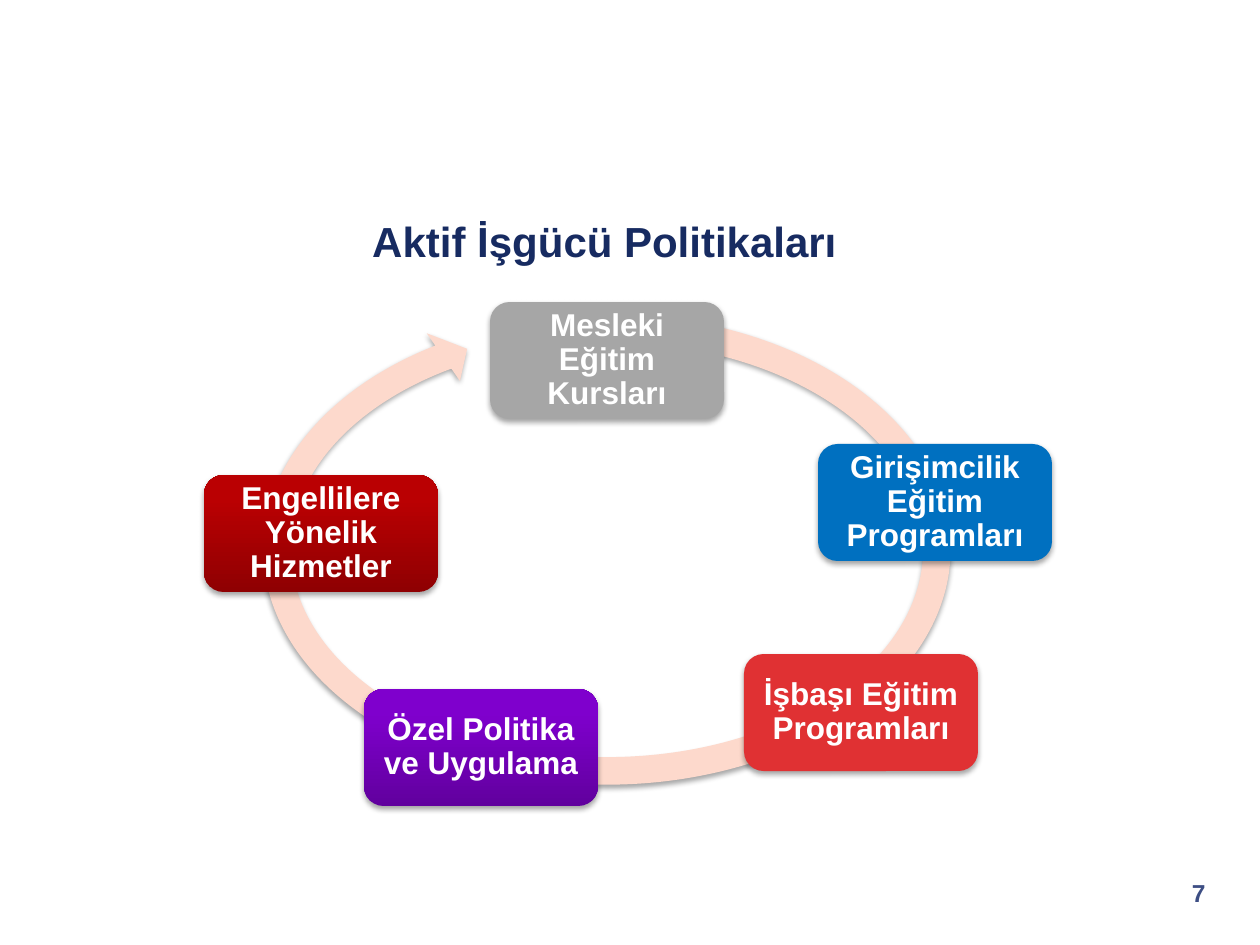
from lxml import etree
from pptx import Presentation
from pptx.dml.color import RGBColor
from pptx.enum.shapes import MSO_SHAPE as Shape
from pptx.enum.text import MSO_ANCHOR as Anchor, PP_ALIGN as Align
from pptx.oxml.ns import qn
from pptx.util import Emu, Pt

NAVY = RGBColor(0x17, 0x2B, 0x61)
SLATE = RGBColor(0x3D, 0x4E, 0x84)
WHITE = RGBColor(0xFF, 0xFF, 0xFF)
PEACH = RGBColor(0xFD, 0xD9, 0xCC)
GRAY = RGBColor(0xA6, 0xA6, 0xA6)
BLUE = RGBColor(0x00, 0x70, 0xC0)
RED = RGBColor(0xE0, 0x31, 0x33)
DARK_PURPLE = RGBColor(0x61, 0x00, 0x9E)
PURPLE = RGBColor(0x7F, 0x00, 0xCD)
DARK_CRIMSON = RGBColor(0x8F, 0x00, 0x02)
CRIMSON = RGBColor(0xBA, 0x00, 0x02)

PX = 914400 / 126  # EMU in one px


def write(box, text, size, color, align):
    frame = box.text_frame
    frame.word_wrap = True
    paragraph = frame.paragraphs[0]
    paragraph.text = text
    paragraph.alignment = align
    font = paragraph.runs[0].font
    font.name, font.size, font.bold = "Arial", Pt(size), True
    font.color.rgb = color
    return frame


def add_shadowed(kind, left, top, width, height, colors):
    """Add a borderless shape with a soft shadow below; two colors make a gradient."""
    shape = slide.shapes.add_shape(kind, *(Emu(round(n * PX)) for n in (left, top, width, height)))
    shape.line.fill.background()
    if len(colors) == 1:
        shape.fill.solid()
        shape.fill.fore_color.rgb = colors[0]
    else:
        shape.fill.gradient()
        shape.fill.gradient_angle = 90
        for stop, color, position in zip(shape.fill.gradient_stops, colors, (0, 0.8)):
            stop.color.rgb = color
            stop.position = position
    shape.shadow.inherit = False
    effects = shape.element.spPr.find(qn("a:effectLst"))
    outer = etree.SubElement(effects, qn("a:outerShdw"), blurRad=str(Pt(3.1)),
                             dist=str(Pt(1.8)), dir="5400000", rotWithShape="0")
    black = etree.SubElement(outer, qn("a:srgbClr"), val="000000")
    etree.SubElement(black, qn("a:alpha"), val="35000")
    return shape


deck = Presentation()
deck.slide_width, deck.slide_height = Emu(round(1260 * PX)), Emu(round(945 * PX))
slide = deck.slides.add_slide(deck.slide_layouts[6])

# Title and page number
labels = [
    ("Aktif İşgücü Politikaları", (64, 178, 1081, 126), 24, NAVY, Align.CENTER, Anchor.MIDDLE),
    ("7", (1147, 872, 71, 63), 14, SLATE, Align.RIGHT, Anchor.TOP),
]
for text, place, size, color, align, anchor in labels:
    box = slide.shapes.add_textbox(*(Emu(round(n * PX)) for n in place))
    write(box, text, size, color, align).vertical_anchor = anchor

# Circular arrow behind the policies
cycle = add_shadowed(Shape.CIRCULAR_ARROW, 248, 299, 718, 501, [PEACH])
for i, value in enumerate((0.055, 3.307, 137.772, 173.852, 0.058)):
    cycle.adjustments[i] = value

# Policies, clockwise from the top
policies = [
    ("Mesleki Eğitim Kursları", 490, 302, [GRAY]),
    ("Girişimcilik Eğitim Programları", 818, 444, [BLUE]),
    ("İşbaşı Eğitim Programları", 744, 654, [RED]),
    ("Özel Politika ve Uygulama", 364, 689, [DARK_PURPLE, PURPLE]),
    ("Engellilere Yönelik Hizmetler", 204, 475, [DARK_CRIMSON, CRIMSON]),
]
for text, left, top, colors in policies:
    policy = add_shadowed(Shape.ROUNDED_RECTANGLE, left, top, 234, 117, colors)
    frame = write(policy, text, 18, WHITE, Align.CENTER)
    frame.vertical_anchor = Anchor.MIDDLE
    frame.margin_left = frame.margin_right = Emu(round(9 * PX))
    frame.margin_top = frame.margin_bottom = Emu(round(9 * PX))
    frame.paragraphs[0].line_spacing = 0.9

deck.save("out.pptx")
